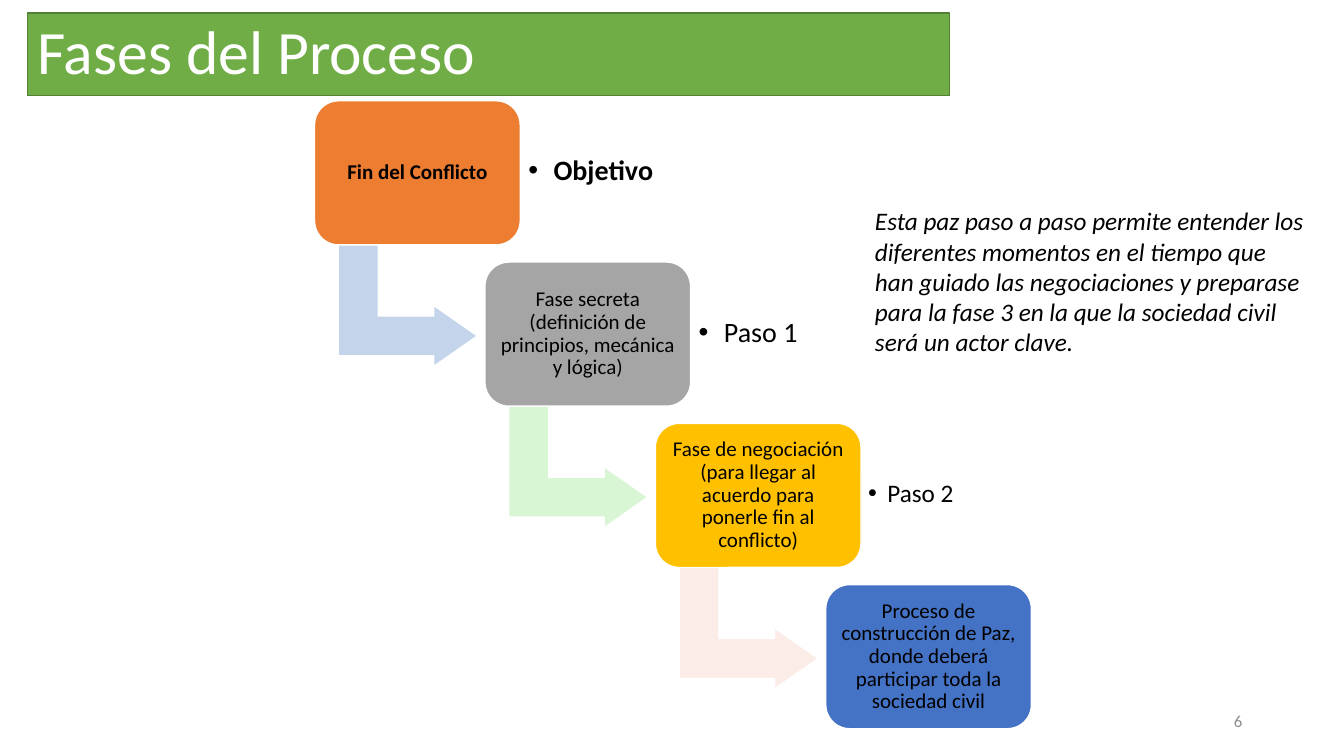
from lxml.etree import SubElement
from pptx import Presentation
from pptx.dml.color import RGBColor
from pptx.enum.shapes import MSO_SHAPE
from pptx.enum.text import MSO_ANCHOR as Anchor, MSO_AUTO_SIZE, PP_ALIGN as Align
from pptx.oxml.ns import qn
from pptx.util import Inches, Pt

COLORS = {
    "title": "70AD47", "title_edge": "538035", "white": "FFFFFF", "black": "000000",
    "number": "8C8C8C", "orange": "ED7D31", "gray": "A5A5A5", "gold": "FFC000",
    "blue": "4472C4", "pale_blue": "C4D5EB", "pale_green": "D8F5D4", "pale_pink": "FCECE8",
}


def write(shape, text, size, color="black", bold=False, italic=False, align=Align.LEFT,
          anchor=Anchor.MIDDLE, spacing=0.9, inset=None, indent=None):
    frame = shape.text_frame
    frame.word_wrap = True
    frame.auto_size = MSO_AUTO_SIZE.NONE
    frame.vertical_anchor = anchor
    if inset is not None:
        frame.margin_left = frame.margin_right = Inches(inset)
        frame.margin_top = frame.margin_bottom = Inches(inset)
    paragraph = frame.paragraphs[0]
    paragraph.alignment = align
    paragraph.line_spacing = spacing
    if indent:
        properties = paragraph._p.get_or_add_pPr()
        properties.set("marL", str(Inches(indent)))
        properties.set("indent", str(-Inches(indent)))
        SubElement(properties, qn("a:buFont"), typeface="Arial")
        SubElement(properties, qn("a:buChar"), char="•")
    run = paragraph.add_run()
    run.text = text
    run.font.name = "Calibri"
    run.font.size = Pt(size)
    run.font.bold = bold
    run.font.italic = italic
    run.font.color.rgb = RGBColor.from_string(COLORS[color])


def paint(shape, fill, edge):
    shape.fill.solid()
    shape.fill.fore_color.rgb = RGBColor.from_string(COLORS[fill])
    shape.line.color.rgb = RGBColor.from_string(COLORS[edge])
    shape.line.width = Pt(1)
    shape.shadow.inherit = False


prs = Presentation()
prs.slide_width, prs.slide_height = Inches(13.33), Inches(7.5)
slide = prs.slides.add_slide(prs.slide_layouts[5])
shapes = slide.shapes

title = shapes.title
title.left, title.top = Inches(0.27), Inches(0.13)
title.width, title.height = Inches(9.15), Inches(0.82)
paint(title, "title", "title_edge")
write(title, "Fases del Proceso", 44, color="white")

phases = [
    ("Fin del Conflicto", "orange", "pale_blue", "Objetivo", 20, 0.25, 0.08),
    ("Fase secreta (definición de principios, mecánica y lógica)",
     "gray", "pale_green", "Paso 1", 20, 0.25, 0.08),
    ("Fase de negociación (para llegar al acuerdo para ponerle fin al conflicto)",
     "gold", "pale_pink", "Paso 2", 18, 0.19, 0.07),
    ("Proceso de construcción de Paz, donde deberá participar toda la sociedad civil",
     "blue", None, None, None, None, None),
]
for index, (phase, fill, arrow_fill, step, step_size, indent, inset) in enumerate(phases):
    left, top = 3.12 + 1.69 * index, 1 + 1.6 * index
    if arrow_fill:
        arrow = shapes.add_shape(MSO_SHAPE.BENT_UP_ARROW, Inches(left + 0.32),
                                 Inches(top + 1.34), Inches(1.21), Inches(1.38))
        arrow.rotation = 90
        for position, value in enumerate((0.328, 0.25, 0.358)):
            arrow.adjustments[position] = value
        paint(arrow, arrow_fill, "white")
    phase_box = shapes.add_shape(MSO_SHAPE.ROUNDED_RECTANGLE, Inches(left), Inches(top),
                                 Inches(2.04), Inches(1.43))
    paint(phase_box, fill, "white")
    write(phase_box, phase, 15, bold=index == 0, align=Align.CENTER, inset=0.06)
    if step:
        step_label = shapes.add_textbox(Inches(left + 2.04), Inches(top + 0.13),
                                        Inches(1.48), Inches(1.15))
        write(step_label, step, step_size, bold=index == 0, inset=inset, indent=indent)

remark = shapes.add_textbox(Inches(8.58), Inches(1.99), Inches(4.5), Inches(1.92))
write(remark, "Esta paz paso a paso permite entender los diferentes momentos en el tiempo "
      "que han guiado las negociaciones y preparase para la fase 3 en la que la sociedad "
      "civil será un actor clave.", 18, italic=True, anchor=Anchor.TOP, spacing=1.0)

page_number = shapes.add_textbox(Inches(9.42), Inches(6.95), Inches(3), Inches(0.4))
write(page_number, "6", 12, color="number", align=Align.RIGHT, spacing=1.0)

prs.save("out.pptx")
